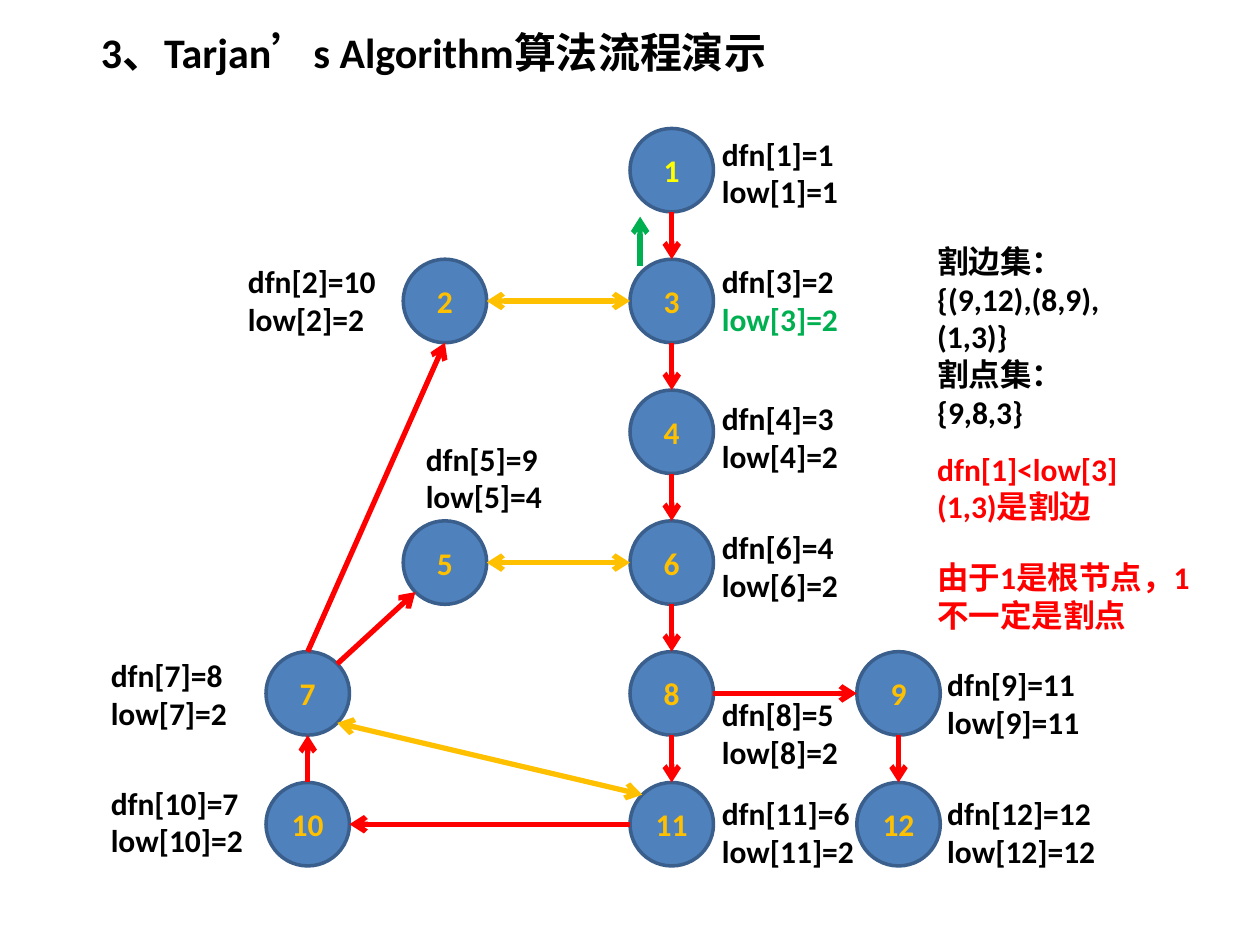
from dataclasses import dataclass
from math import hypot

from lxml import etree
from pptx import Presentation
from pptx.dml.color import RGBColor
from pptx.enum.shapes import MSO_CONNECTOR, MSO_SHAPE
from pptx.enum.text import MSO_ANCHOR, MSO_AUTO_SIZE, PP_ALIGN
from pptx.oxml.ns import qn
from pptx.util import Pt

STRAIGHT = MSO_CONNECTOR.STRAIGHT
OVAL = MSO_SHAPE.OVAL
TOP, MIDDLE = MSO_ANCHOR.TOP, MSO_ANCHOR.MIDDLE
LEFT, CENTER = PP_ALIGN.LEFT, PP_ALIGN.CENTER
NO_FIT = MSO_AUTO_SIZE.NONE


@dataclass(frozen=True)
class Theme:
    font: str = "Calibri"
    title_size: int = 24
    body_size: int = 18
    text: str = "000000"
    node: str = "4F81BD"
    node_line: str = "3A5F8C"
    number: str = "FFC000"
    root_number: str = "FFFF00"
    tree: str = "FF0000"
    back: str = "FFC000"
    update: str = "00B050"
    alert: str = "FF0000"
    node_width: int = 2
    edge_width: int = 3


THEME = Theme()
DIAMETER = 47.7
ROW_STEP = 74.75
COLUMNS = (0, 78.4, 208, 337.6)

NODES = {
    1: (2, 0), 3: (2, 1), 4: (2, 2), 6: (2, 3), 8: (2, 4), 11: (2, 5),
    2: (1, 1), 5: (1, 3), 7: (0, 4), 10: (0, 5), 9: (3, 4), 12: (3, 5),
}
VALUES = {
    1: (1, 1), 2: (10, 2), 3: (2, 2), 4: (3, 2), 5: (9, 4), 6: (4, 2),
    7: (8, 2), 8: (5, 2), 9: (11, 11), 10: (7, 2), 11: (6, 2), 12: (12, 12),
}
LABEL_BOXES = {
    1: (253.4, 0, 96), 3: (253.4, 72.7, 84), 4: (253.4, 151.2, 84),
    6: (253.4, 224.7, 84), 8: (253.4, 320.4, 84), 11: (253.4, 376.6, 96),
    2: (-17.4, 72.7, 96), 5: (84.2, 174.3, 96), 7: (-95.8, 298.1, 96),
    10: (-95.8, 370.8, 96), 9: (382.2, 303.2, 101.5), 12: (382.2, 376.6, 101.5),
}
N, S, W, E = (0, -1), (0, 1), (-1, 0), (1, 0)
NW, NE, SW, SE = (-1, -1), (1, -1), (-1, 1), (1, 1)
TREE_EDGES = [
    (1, S, 3, N), (3, S, 4, N), (4, S, 6, N), (6, S, 8, N), (8, S, 11, N),
    (11, W, 10, E), (10, N, 7, S), (7, NE, 5, SW), (7, N, 2, S),
    (8, E, 9, W), (9, S, 12, N),
]
BACK_EDGES = [(7, SE, 11, NW), (5, E, 6, W), (2, E, 3, W)]
NOTES = [
    (0, 146.2, 94.3, THEME.text,
     ("割边集：", "{(9,12),(8,9),(1,3)}", "割点集：", "{9,8,3}")),
    (118.8, 129.6, 51, THEME.alert, ("dfn[1]<low[3]", "(1,3)是割边")),
    (180.7, 168.5, 51, THEME.alert, ("由于1是根节点，1不一定是割点",)),
]


def write(tf, lines, size, color, align=LEFT):
    tf.text = "\n".join(lines)
    for p in tf.paragraphs:
        p.alignment = align
        for r in p.runs:
            r.font.name = THEME.font
            r.font.size = Pt(size)
            r.font.bold = True
            r.font.color.rgb = RGBColor.from_string(color)


def add_text(slide, x, y, w, h, lines, color=THEME.text):
    sp = slide.shapes.add_textbox(Pt(x), Pt(y), Pt(w), Pt(h))
    tf = sp.text_frame
    tf.word_wrap = True
    write(tf, lines, THEME.body_size, color)
    return tf


def add_arrow(slide, start, end, color, ends=("tailEnd",)):
    cxn = slide.shapes.add_connector(STRAIGHT, *map(Pt, start + end))
    cxn.line.color.rgb = RGBColor.from_string(color)
    cxn.line.width = Pt(THEME.edge_width)
    props = cxn._element.spPr
    ln = props.find(qn("a:ln"))
    for tag in ends:
        etree.SubElement(ln, qn("a:" + tag), type="arrow")
    etree.SubElement(props, qn("a:effectLst"))


def add_title(slide, x, y, w, h):
    sp = slide.shapes.title
    sp.left, sp.top, sp.width, sp.height = Pt(x), Pt(y), Pt(w), Pt(h)
    tf = sp.text_frame
    tf.auto_size = NO_FIT
    tf.vertical_anchor = TOP
    write(tf, ["3、Tarjan’s Algorithm算法流程演示"], THEME.title_size, THEME.text)


def add_node(slide, x, y, number):
    sp = slide.shapes.add_shape(OVAL, Pt(x), Pt(y), Pt(DIAMETER), Pt(DIAMETER))
    sp.shadow.inherit = False
    sp.fill.solid()
    sp.fill.fore_color.rgb = RGBColor.from_string(THEME.node)
    sp.line.color.rgb = RGBColor.from_string(THEME.node_line)
    sp.line.width = Pt(THEME.node_width)
    tf = sp.text_frame
    tf.vertical_anchor = MIDDLE
    tf.margin_left = tf.margin_right = 0
    color = THEME.root_number if number == 1 else THEME.number
    write(tf, [str(number)], THEME.body_size, color, CENTER)


def add_graph(slide, x, y):
    def corner(number):
        col, row = NODES[number]
        return x + COLUMNS[col], y + row * ROW_STEP

    def site(number, direction):
        radius = DIAMETER / 2
        scale = radius / hypot(*direction)
        return tuple(c + radius + d * scale
                     for c, d in zip(corner(number), direction))

    for number in NODES:
        add_node(slide, *corner(number), number)
    for number, (dx, dy, w) in LABEL_BOXES.items():
        dfn, low = VALUES[number]
        lines = [f"dfn[{number}]={dfn}", f"low[{number}]={low}"]
        tf = add_text(slide, x + dx, y + dy, w, 51, lines)
        if number == 3:
            r = tf.paragraphs[1].runs[0]
            r.font.color.rgb = RGBColor.from_string(THEME.update)
    for a, from_side, b, to_side in TREE_EDGES:
        add_arrow(slide, site(a, from_side), site(b, to_side), THEME.tree)
    for a, from_side, b, to_side in BACK_EDGES:
        add_arrow(slide, site(a, from_side), site(b, to_side), THEME.back,
                  ("headEnd", "tailEnd"))
    add_arrow(slide, (x + 213.8, y + 78.5), (x + 213.8, y + 50.4), THEME.update)


def add_notes(slide, x, y):
    for dy, w, h, color, lines in NOTES:
        add_text(slide, x, y + dy, w, h, lines, color)


def main():
    prs = Presentation()
    prs.slide_width, prs.slide_height = Pt(720), Pt(540)
    slide = prs.slides.add_slide(prs.slide_layouts[5])
    add_title(slide, 50.4, 11.5, 512, 36)
    add_graph(slide, 152, 73.4)
    add_notes(slide, 528.5, 134.6)
    prs.save("out.pptx")


if __name__ == "__main__":
    main()
